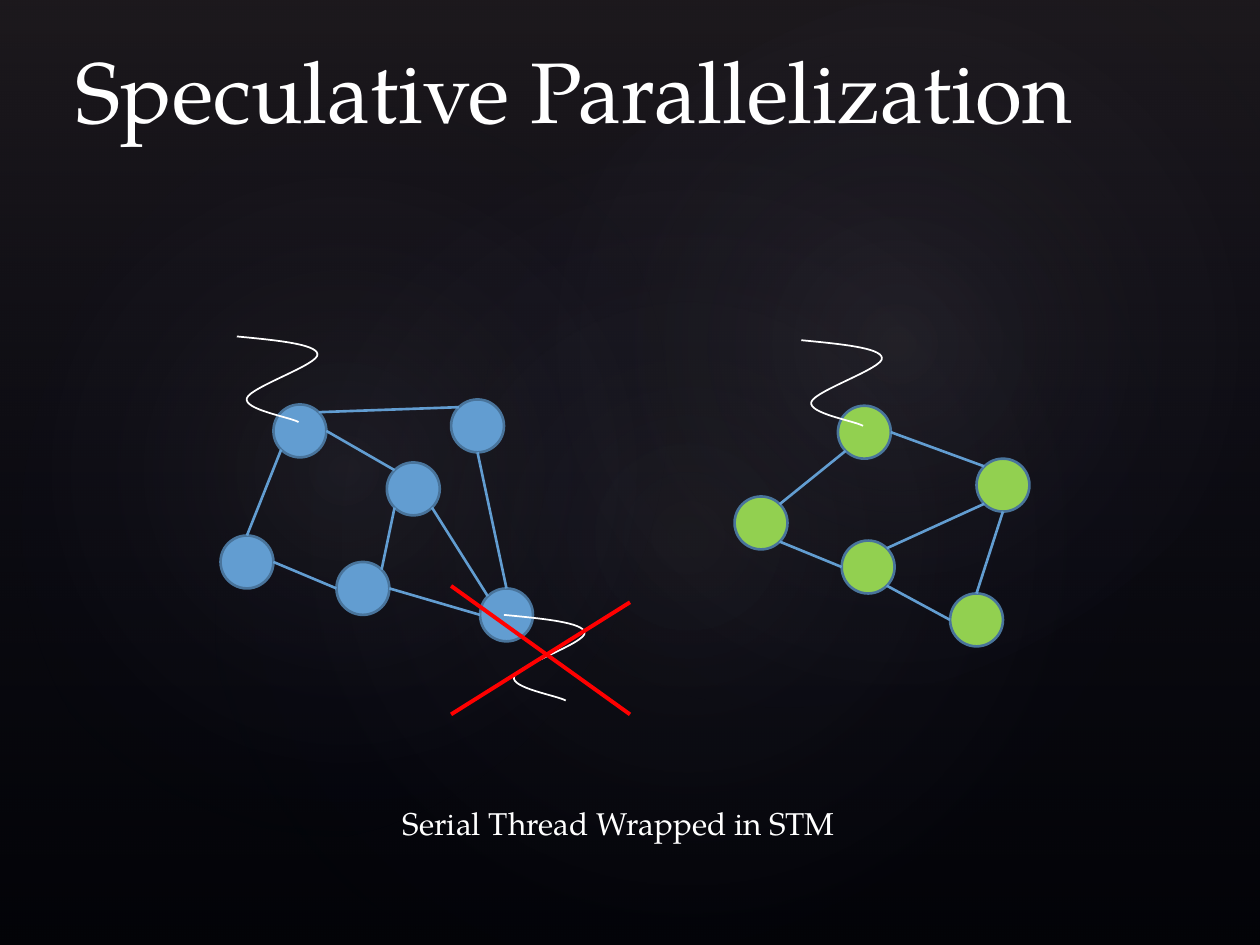
import math
from lxml import etree
from pptx import Presentation
from pptx import util as u
from pptx.dml.color import RGBColor
from pptx.enum import shapes, text
from pptx.oxml import parse_xml
from pptx.oxml.ns import nsdecls, qn

FONT = "TeX Gyre Pagella"
NODE = 0.42
TOP, TOP_LEFT, LEFT, BOTTOM_LEFT, BOTTOM, BOTTOM_RIGHT, RIGHT, TOP_RIGHT = range(8)
GLOWS = [
    ((1.5, 1.14, 7.92, 6.24), 328.7, 7),
    ((-0.3, 1.28, 6.06, 4.9), 294.3, 8),
    ((3.58, 0.13, 7.09, 5.2), 328.7, 8),
]
BLUE_NODES = dict(A=(0.42, 0.04), B=(0.92, 1.29), C=(1.83, 0), D=(0, 1.08),
                  E=(1.32, 0.5), F=(2.06, 1.5))
BLUE_EDGES = [
    ("A", BOTTOM_LEFT, "D", TOP), ("D", RIGHT, "B", LEFT),
    ("A", RIGHT, "E", TOP_LEFT), ("E", BOTTOM_LEFT, "B", TOP_RIGHT),
    ("B", RIGHT, "F", LEFT), ("C", BOTTOM, "F", TOP),
    ("A", TOP_RIGHT, "C", TOP_LEFT), ("E", BOTTOM_RIGHT, "F", TOP_LEFT),
]
GREEN_NODES = dict(G=(0.82, 0), H=(0, 0.72), I=(0.85, 1.07), J=(1.92, 0.42), K=(1.71, 1.49))
GREEN_EDGES = [
    ("G", BOTTOM_LEFT, "H", TOP_RIGHT), ("H", BOTTOM_RIGHT, "I", LEFT),
    ("I", BOTTOM_RIGHT, "K", LEFT), ("J", BOTTOM, "K", TOP),
    ("I", TOP_RIGHT, "J", BOTTOM_LEFT), ("G", RIGHT, "J", TOP_LEFT),
]
THREAD = [(0, 0), (0.31, 0.03), (0.63, 0.06), (0.64, 0.14), (0.66, 0.22), (0.11, 0.4),
          (0.08, 0.49), (0.05, 0.58), (0.42, 0.64), (0.49, 0.68)]


def paint(fill, color):
    """Fill a fill format with one hex colour."""
    fill.solid()
    fill.fore_color.rgb = RGBColor.from_string(color)


def outline(sp, color, width):
    """Give a shape or connector a plain line."""
    paint(sp.line.fill, color)
    sp.line.width = u.Pt(width)


def add_gradient(s, kind, box, stops, direction):
    """Add an unlined shape with a translucent gradient of (position, colour, alpha) stops."""
    sp = s.shapes.add_shape(kind, *map(u.Inches, box))
    sp.shadow.inherit = False
    sp.line.fill.background()
    marks = "".join(
        f'<a:gs pos="{pos * 1000}"><a:srgbClr val="{color}"><a:alpha val="{alpha * 1000}"/>'
        f'</a:srgbClr></a:gs>' for pos, color, alpha in stops)
    gradient = parse_xml(f'<a:gradFill {nsdecls("a")} rotWithShape="1"><a:gsLst>{marks}</a:gsLst>'
                         f'{direction}</a:gradFill>')
    sp.element.spPr.find(qn("a:prstGeom")).addnext(gradient)
    return sp


def add_backdrop(s, width, height):
    """Cover the slide with a dark gradient and soft round glows."""
    paint(s.background.fill, "000000")
    add_gradient(s, shapes.MSO_SHAPE.RECTANGLE, (0, 0, width, height),
                 [(0, "504652", 36), (100, "242852", 10)], '<a:lin ang="5400000" scaled="0"/>')
    circle = '<a:path path="circle"><a:fillToRect l="50000" t="50000" r="50000" b="50000"/></a:path>'
    for box, angle, alpha in GLOWS:
        glow = add_gradient(s, shapes.MSO_SHAPE.OVAL, box,
                            [(0, "C4BCC6", alpha), (58, "242852", 0)], circle)
        glow.rotation = angle


def write(sp, words, size):
    """Set one left-aligned white line of text."""
    tf = sp.text_frame
    tf.word_wrap = True
    p = tf.paragraphs[0]
    p.text = words
    p.alignment = text.PP_ALIGN.LEFT
    p.font.size, p.font.name = u.Pt(size), FONT
    p.font.color.rgb = RGBColor.from_string("FFFFFF")


def add_title(s, words, box):
    """Place the title placeholder above the backdrop."""
    sp = s.shapes.title
    sp.left, sp.top, sp.width, sp.height = map(u.Inches, box)
    write(sp, words, 49)
    sp.text_frame.auto_size = text.MSO_AUTO_SIZE.NONE
    sp.text_frame.vertical_anchor = text.MSO_ANCHOR.BOTTOM
    sp.element.getparent().append(sp.element)


def add_line(s, start, end, color, width):
    """Draw a straight line between two points."""
    line = s.shapes.add_connector(shapes.MSO_CONNECTOR.STRAIGHT, *map(u.Inches, (*start, *end)))
    outline(line, color, width)
    etree.SubElement(line.element.spPr, qn("a:effectLst"))
    return line


def add_graph(s, left, top, nodes, edges, color):
    """Draw round nodes from a corner and join them at their connection sites."""
    ovals = {}
    for name, (x, y) in nodes.items():
        sp = s.shapes.add_shape(shapes.MSO_SHAPE.OVAL, *map(u.Inches, (left + x, top + y, NODE, NODE)))
        sp.shadow.inherit = False
        paint(sp.fill, color)
        outline(sp, "49749B", 1.5)
        ovals[name] = sp

    def site_point(name, site):
        x, y = nodes[name]
        angle = math.radians(90 + 45 * site)
        return (left + x + NODE / 2 * (1 + math.cos(angle)),
                top + y + NODE / 2 * (1 - math.sin(angle)))

    for first, first_site, last, last_site in edges:
        line = add_line(s, site_point(first, first_site), site_point(last, last_site), "629DD1", 1.5)
        joints = line.element.find(".//" + qn("p:cNvCxnSpPr"))
        for tag, name, site in (("a:stCxn", first, first_site), ("a:endCxn", last, last_site)):
            etree.SubElement(joints, qn(tag), id=str(ovals[name].shape_id), idx=str(site))


def add_thread(s, left, top):
    """Draw a wavy thread as cubic curves through every third point."""
    points = [(u.Inches(left + x), u.Inches(top + y)) for x, y in THREAD]
    builder = s.shapes.build_freeform(*points[0])
    builder.add_line_segments(points[1:], close=False)
    sp = builder.convert_to_shape()
    sp.shadow.inherit = False
    sp.fill.background()
    outline(sp, "FFFFFF", 1)
    outline_path = sp.element.find(".//" + qn("a:path"))
    segments = outline_path.findall(qn("a:lnTo"))
    for i in range(0, len(segments), 3):
        curve = etree.SubElement(outline_path, qn("a:cubicBezTo"))
        for segment in segments[i:i + 3]:
            curve.append(segment[0])
            outline_path.remove(segment)


def add_caption(s, words, box):
    """Add the caption under the graphs."""
    write(s.shapes.add_textbox(*map(u.Inches, box)), words, 18)


def add_cross(s, left, top, width, height):
    """Strike out a region with two red diagonals."""
    right, bottom = left + width, top + height
    add_line(s, (right, top + 0.13), (left, bottom), "FF0000", 2.25)
    add_line(s, (left, top), (right, bottom), "FF0000", 2.25)


def main():
    """Build and save the slide."""
    prs = Presentation()
    prs.slide_width, prs.slide_height = u.Inches(10), u.Inches(7.5)
    s = prs.slides.add_slide(prs.slide_layouts[5])
    add_backdrop(s, 10, 7.5)
    add_title(s, "Speculative Parallelization", (0.5, 0.17, 8.25, 1))
    add_graph(s, 1.75, 3.17, BLUE_NODES, BLUE_EDGES, "629DD1")
    add_graph(s, 5.83, 3.22, GREEN_NODES, GREEN_EDGES, "92D050")
    add_caption(s, "Serial Thread Wrapped in STM", (3.1, 6.33, 4.16, 0.4))
    for left, top in ((1.88, 2.67), (4, 4.88), (6.36, 2.7)):
        add_thread(s, left, top)
    add_cross(s, 3.58, 4.65, 1.42, 1.02)
    prs.save("out.pptx")


if __name__ == "__main__":
    main()
